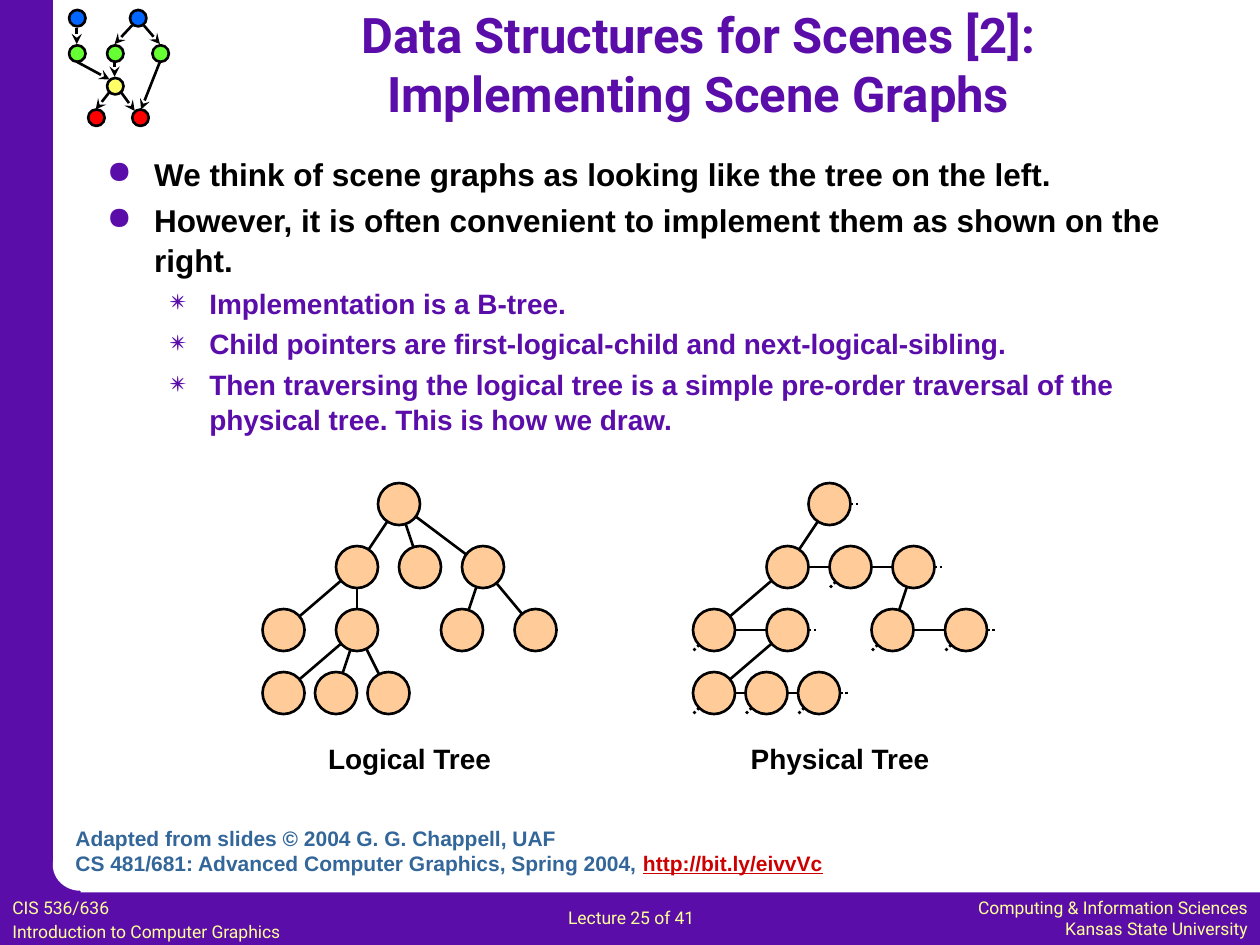
from pptx import Presentation
from pptx.dml.color import RGBColor as RGB
from pptx.enum.dml import MSO_LINE as Dash
from pptx.enum.shapes import MSO_CONNECTOR as Link, MSO_SHAPE as Shape
from pptx.enum.text import MSO_ANCHOR as Anchor, PP_ALIGN as Align
from pptx.oxml.ns import qn
from pptx.util import Pt
from lxml.etree import SubElement

COLORS = {
    "purple": "5B0DAA", "white": "FFFFFF", "black": "000000", "cream": "FFFF99",
    "peach": "FFCC99", "steel": "336699", "link": "CC0000", "blue": "0066FF",
    "green": "66FF33", "yellow": "FFFF66", "red": "FF0000",
}

FRAME = [
    (Shape.RECTANGLE, (0, 510, 720, 30), "purple"),
    (Shape.RECTANGLE, (0, 0, 30.2, 540), "purple"),
    (Shape.RECTANGLE, (14.4, 493.2, 31.7, 31.7), "purple"),
    (Shape.OVAL, (30.2, 479.5, 31.7, 29.5), "white"),
]

EMBLEM_NODES = [
    (44.2, 10.4, "blue"), (79, 10.4, "blue"),
    (44.2, 30.6, "green"), (65.9, 30.6, "green"), (91.8, 30.6, "green"),
    (65.9, 49.3, "yellow"), (55.1, 67.3, "red"), (80.3, 67.3, "red"),
]
EMBLEM_ARROWS = [
    (43.9, 15.8, 43.9, 25.2), (75.6, 14.4, 65.5, 25.2), (82.1, 14.4, 91.4, 25.2),
    (43.9, 35.3, 62.6, 45.4), (65.5, 35.3, 65.5, 43.9), (91.4, 35.3, 80.6, 62.6),
    (69.1, 52.6, 77, 63.4), (62.6, 52.6, 54.7, 62.6),
]
EMBLEM_RADIUS = 4.7

TREE = {
    "root": (228, 0, ["a", "b", "c"]),
    "a": (204, 1, ["d", "e"]), "b": (240, 1, []), "c": (276, 1, ["f", "g"]),
    "d": (162, 2, []), "e": (204, 2, ["h", "i", "j"]),
    "f": (264, 2, []), "g": (306, 2, []),
    "h": (162, 3, []), "i": (192, 3, []), "j": (222, 3, []),
}
TREE_TOP, LEVEL_GAP, NODE_RADIUS, PHYSICAL_SHIFT = 288, 36, 12, 246

HEADING = {"name": "Roboto", "size": Pt(28), "bold": True, "color": "purple"}
FOOTER = {"name": "Roboto", "size": Pt(10), "bold": False, "color": "cream"}
POINT = {"name": "Arial", "size": Pt(18), "bold": True, "color": "black"}
DETAIL = {**POINT, "size": Pt(16), "color": "purple"}
CAPTION = {**POINT, "size": Pt(16)}
CREDIT = {**POINT, "size": Pt(12), "color": "steel"}
ADDRESS = {**CREDIT, "color": "link", "underline": True}

BULLETS = {0: ("●", 27, -27, POINT), 1: ("✴", 58.5, -22.5, DETAIL)}
POINTS = [
    (0, "We think of scene graphs as looking like the tree on the left."),
    (0, "However, it is often convenient to implement them as shown on the right."),
    (1, "Implementation is a B-tree."),
    (1, "Child pointers are first-logical-child and next-logical-sibling."),
    (1, "Then traversing the logical tree is a simple pre-order traversal of the "
        "physical tree. This is how we draw."),
]

LABELS = [
    ((90, 6, 618, 60), Align.CENTER, Anchor.MIDDLE, 0,
     [[("Data Structures for Scenes [2]:", HEADING)],
      [("Implementing Scene Graphs", HEADING)]]),
    ((517, 509, 203, 31), Align.RIGHT, Anchor.TOP, 0,
     [[("Computing & Information Sciences", FOOTER)],
      [("Kansas State University", FOOTER)]]),
    ((0, 509, 212, 31.7), Align.LEFT, Anchor.TOP, 2,
     [[("CIS 536/636", FOOTER)], [("Introduction to Computer Graphics", FOOTER)]]),
    ((317.5, 514.8, 109.4, 19.4), Align.LEFT, Anchor.TOP, 0,
     [[("Lecture 25 of 41", FOOTER)]]),
    ((168, 420, 132, 26.6), Align.CENTER, Anchor.TOP, 0, [[("Logical Tree", CAPTION)]]),
    ((414, 420, 132, 26.6), Align.CENTER, Anchor.TOP, 0, [[("Physical Tree", CAPTION)]]),
    ((36, 468, 456, 36), Align.LEFT, Anchor.TOP, 0,
     [[("Adapted from slides © 2004 G. G. Chappell, UAF", CREDIT)],
      [("CS 481/681: Advanced Computer Graphics, Spring 2004, ", CREDIT),
       ("http://bit.ly/eivvVc", ADDRESS)]]),
]


def rgb(name):
    return RGB.from_string(COLORS[name])


def style(font, values):
    for key, value in values.items():
        if key == "color":
            font.color.rgb = rgb(value)
        else:
            setattr(font, key, value)


def add_solid(slide, kind, place, fill, outlined=False):
    solid = slide.shapes.add_shape(kind, *map(Pt, place))
    solid.shadow.inherit = False
    solid.fill.solid()
    solid.fill.fore_color.rgb = rgb(fill)
    if outlined:
        solid.line.color.rgb = rgb("black")
        solid.line.width = Pt(1.5)
    else:
        solid.line.fill.background()


def add_node(slide, x, y, radius, fill):
    place = (x - radius, y - radius, 2 * radius, 2 * radius)
    add_solid(slide, Shape.OVAL, place, fill, outlined=True)


def add_edge(slide, start, end, dotted=False, arrow=False):
    edge = slide.shapes.add_connector(Link.STRAIGHT, *map(Pt, (*start, *end)))
    edge.line.color.rgb = rgb("black")
    edge.line.width = Pt(1.5)
    if dotted:
        edge.line.dash_style = Dash.ROUND_DOT
    properties = edge.element.spPr
    if arrow:
        SubElement(properties.find(qn("a:ln")), qn("a:tailEnd"), type="stealth")
    SubElement(properties, qn("a:effectLst"))


def add_text_frame(slide, place, anchor):
    frame = slide.shapes.add_textbox(*map(Pt, place)).text_frame
    frame.word_wrap = True
    frame.vertical_anchor = anchor
    return frame


def next_paragraph(frame, index):
    return frame.add_paragraph() if index else frame.paragraphs[0]


def add_label(slide, place, align, anchor, gap, lines):
    frame = add_text_frame(slide, place, anchor)
    for index, pieces in enumerate(lines):
        line = next_paragraph(frame, index)
        line.alignment = align
        line.space_before = Pt(gap if index else 0)
        for words, look in pieces:
            run = line.add_run()
            run.text = words
            style(run.font, look)


def add_points(slide):
    frame = add_text_frame(slide, (54, 84.2, 625.7, 372.2), Anchor.TOP)
    for index, (level, words) in enumerate(POINTS):
        mark, margin, indent, look = BULLETS[level]
        line = next_paragraph(frame, index)
        line.level = level
        line.line_spacing = 1.05
        line.space_before = int(look["size"] * 0.2) if index else Pt(0)
        layout = line._p.get_or_add_pPr()
        layout.set("marL", str(Pt(margin)))
        layout.set("indent", str(Pt(indent)))
        tint = SubElement(layout, qn("a:buClr"))
        SubElement(tint, qn("a:srgbClr"), val=COLORS["purple"])
        SubElement(layout, qn("a:buChar"), char=mark)
        run = line.add_run()
        run.text = words
        style(run.font, look)


def add_trees(slide):
    logical = {name: (x, TREE_TOP + level * LEVEL_GAP)
               for name, (x, level, _) in TREE.items()}
    physical = {name: (x + PHYSICAL_SHIFT, y) for name, (x, y) in logical.items()}
    first_child = {name: kids[0] for name, (_, _, kids) in TREE.items() if kids}
    next_sibling = {left: right for _, _, kids in TREE.values()
                    for left, right in zip(kids, kids[1:])}
    for parent, (_, _, kids) in TREE.items():
        for child in kids:
            add_edge(slide, logical[parent], logical[child])
    for name, (x, y) in physical.items():
        for pointers, (dx, dy) in ((first_child, (-12, 12)), (next_sibling, (18, 0))):
            if name in pointers:
                add_edge(slide, (x, y), physical[pointers[name]])
            else:
                add_edge(slide, (x, y), (x + dx, y + dy), dotted=True)
    for x, y in [*logical.values(), *physical.values()]:
        add_node(slide, x, y, NODE_RADIUS, "peach")


def main():
    deck = Presentation()
    deck.slide_width, deck.slide_height = Pt(720), Pt(540)
    slide = deck.slides.add_slide(deck.slide_layouts[6])
    for kind, place, fill in FRAME:
        add_solid(slide, kind, place, fill)
    for x, y, fill in EMBLEM_NODES:
        add_node(slide, x, y, EMBLEM_RADIUS, fill)
    for x1, y1, x2, y2 in EMBLEM_ARROWS:
        add_edge(slide, (x1, y1), (x2, y2), arrow=True)
    add_points(slide)
    add_trees(slide)
    for label in LABELS:
        add_label(slide, *label)
    deck.save("out.pptx")


if __name__ == "__main__":
    main()
